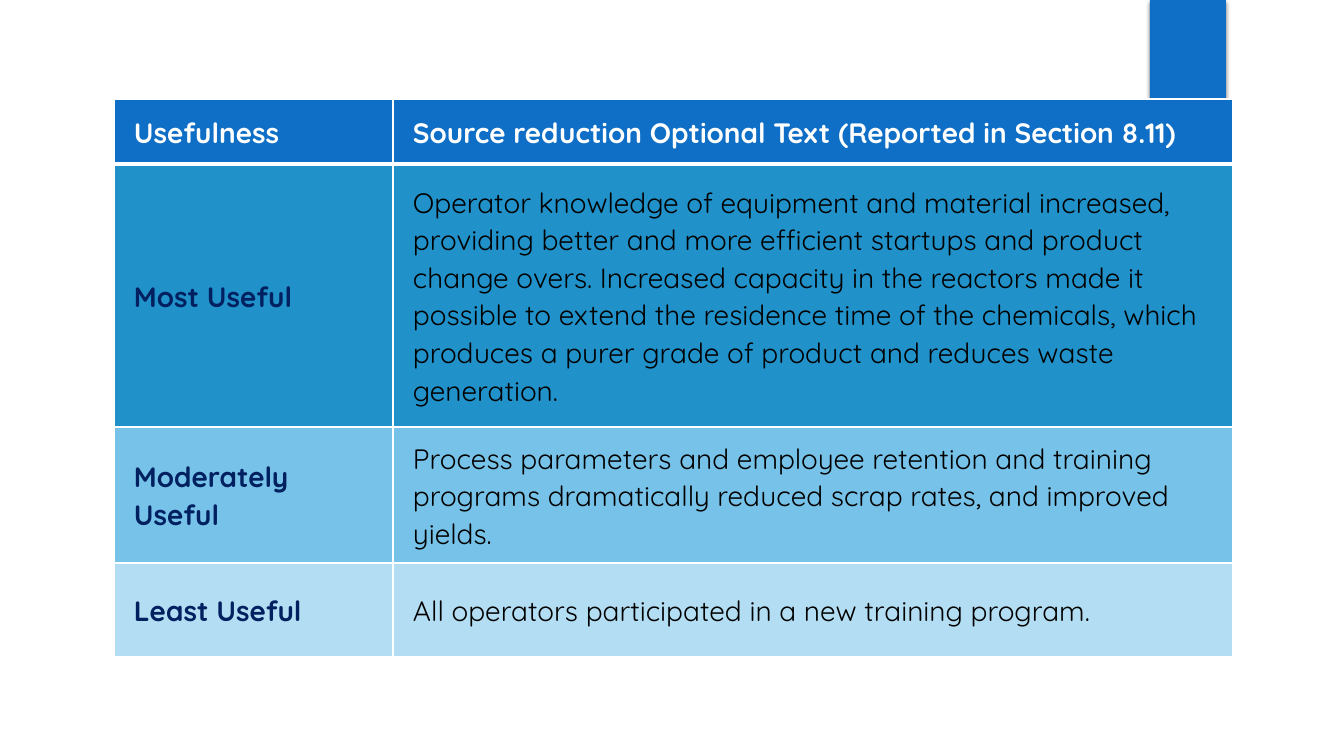
"""Build a slide with a table that ranks source reduction texts by usefulness."""
from lxml.etree import SubElement
from pptx import Presentation
from pptx.dml.color import RGBColor
from pptx.enum.shapes import MSO_SHAPE
from pptx.enum.text import MSO_ANCHOR
from pptx.oxml.ns import qn
from pptx.util import Pt

ROWS = [
    ("Usefulness", "Source reduction Optional Text (Reported in Section 8.11)"),
    ("Most Useful",
     "Operator knowledge of equipment and material increased, providing better "
     "and more efficient startups and product change overs. Increased capacity "
     "in the reactors made it possible to extend the residence time of the "
     "chemicals, which produces a purer grade of product and reduces waste "
     "generation."),
    ("Moderately Useful",
     "Process parameters and employee retention and training programs "
     "dramatically reduced scrap rates, and improved yields."),
    ("Least Useful", "All operators participated in a new training program."),
]
ROW_FILLS = ["0F6FC6", "2191C9", "77C2E8", "B3DDF2"]
ROW_HEIGHTS = [65, 263, 136, 94]
COL_WIDTHS = [279, 840]
TABLE_LEFT, TABLE_TOP = 114, 99
ACCENT_BOX = (1150, 0, 76, 126)
WHITE, NAVY, BLACK = "FFFFFF", "002060", "000000"
FONT = "Quicksand"


def px(n):
    return round(n * 914400 / 100.8)


def rgb(color):
    return RGBColor.from_string(color)


def add_shadow(sp):
    effects = sp._element.spPr.find(qn("a:effectLst"))
    shadow = SubElement(effects, qn("a:outerShdw"), blurRad=str(Pt(3)),
                        dist=str(Pt(2)), dir="5400000", rotWithShape="0")
    clr = SubElement(shadow, qn("a:srgbClr"), val=BLACK)
    SubElement(clr, qn("a:alpha"), val="45000")


def set_border(cell, side, width):
    ln = SubElement(cell._tc.get_or_add_tcPr(), qn(f"a:ln{side}"), w=str(Pt(width)))
    fill = SubElement(ln, qn("a:solidFill"))
    SubElement(fill, qn("a:srgbClr"), val=WHITE)


def fill_cell(cell, text, row, col):
    for side in "LRTB":
        under_header = (row, side) in ((0, "B"), (1, "T"))
        set_border(cell, side, 3 if under_header else 1)
    cell.fill.solid()
    cell.fill.fore_color.rgb = rgb(ROW_FILLS[row])
    cell.vertical_anchor = MSO_ANCHOR.MIDDLE
    cell.margin_left = cell.margin_right = px(20)
    cell.margin_top = cell.margin_bottom = px(10)
    cell.text = text
    p = cell.text_frame.paragraphs[0]
    p.line_spacing = 1.07
    p.space_after = Pt(8)
    p.font.name = FONT
    p.font.size = Pt(20)
    p.font.bold = row == 0 or col == 0
    p.font.color.rgb = rgb(WHITE if row == 0 else NAVY if col == 0 else BLACK)


def main():
    prs = Presentation()
    prs.slide_width, prs.slide_height = px(1344), px(756)
    s = prs.slides.add_slide(prs.slide_layouts[6])

    sp = s.shapes.add_shape(MSO_SHAPE.RECTANGLE, *map(px, ACCENT_BOX))
    sp.shadow.inherit = False
    sp.fill.solid()
    sp.fill.fore_color.rgb = rgb(ROW_FILLS[0])
    sp.line.fill.background()
    add_shadow(sp)

    table = s.shapes.add_table(
        len(ROWS), len(COL_WIDTHS), px(TABLE_LEFT), px(TABLE_TOP),
        px(sum(COL_WIDTHS)), px(sum(ROW_HEIGHTS))).table
    for column, width in zip(table.columns, COL_WIDTHS):
        column.width = px(width)
    for i, texts in enumerate(ROWS):
        table.rows[i].height = px(ROW_HEIGHTS[i])
        for j, text in enumerate(texts):
            fill_cell(table.cell(i, j), text, i, j)

    prs.save("out.pptx")


if __name__ == "__main__":
    main()
